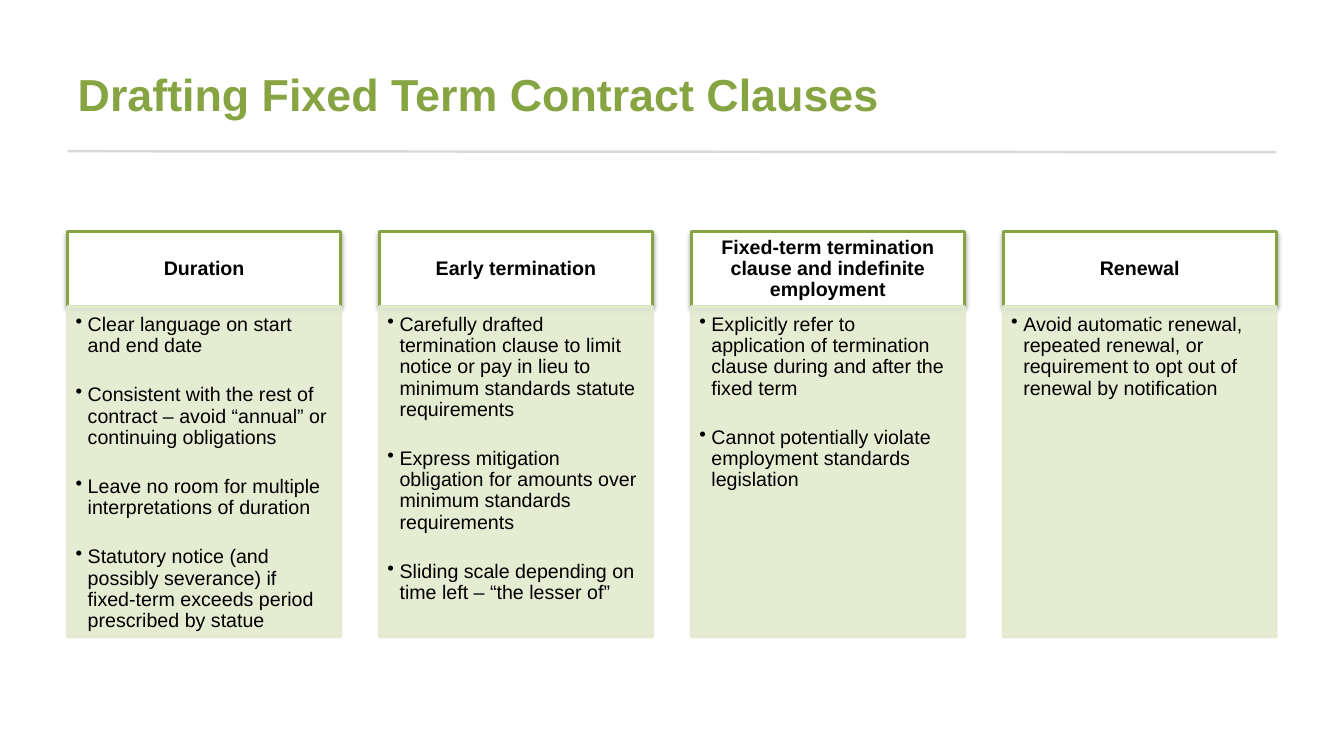
"""Build the slide on drafting fixed term contract clauses."""
from lxml.etree import SubElement
from pptx import Presentation
from pptx.dml.color import RGBColor
from pptx.enum.shapes import MSO_CONNECTOR, MSO_SHAPE
from pptx.enum.text import MSO_ANCHOR, PP_ALIGN
from pptx.oxml import parse_xml
from pptx.oxml.ns import nsdecls, qn
from pptx.util import Inches, Pt

GREEN = RGBColor(0x87, 0xA4, 0x43)
PALE = RGBColor(0xE3, 0xEA, 0xCE)
GREY = RGBColor(0xD9, 0xD9, 0xD9)
WHITE = RGBColor(0xFF, 0xFF, 0xFF)
BLACK = RGBColor(0, 0, 0)

CLAUSES = [
    ("Duration", [
        "Clear language on start and end date",
        "Consistent with the rest of contract – avoid “annual” or continuing obligations",
        "Leave no room for multiple interpretations of duration",
        "Statutory notice (and possibly severance) if fixed-term exceeds period prescribed by statue",
    ]),
    ("Early termination", [
        "Carefully drafted termination clause to limit notice or pay in lieu to minimum standards statute requirements",
        "Express mitigation obligation for amounts over minimum standards requirements",
        "Sliding scale depending on time left – “the lesser of”",
    ]),
    ("Fixed-term termination clause and indefinite employment", [
        "Explicitly refer to application of termination clause during and after the fixed term",
        "Cannot potentially violate employment standards legislation",
    ]),
    ("Renewal", [
        "Avoid automatic renewal, repeated renewal, or requirement to opt out of renewal by notification",
    ]),
]
LEFT, STEP, WIDTH = 0.67, 3.093, 2.71
SHADOW = (
    f'<a:effectLst {nsdecls("a")}><a:outerShdw blurRad="40000" dist="20000" dir="5400000" rotWithShape="0">'
    '<a:srgbClr val="000000"><a:alpha val="38000"/></a:srgbClr></a:outerShdw></a:effectLst>'
)


def add_box(left, top, height, fill, edge, insets):
    box = slide.shapes.add_shape(
        MSO_SHAPE.RECTANGLE, Inches(left), Inches(top), Inches(WIDTH), Inches(height))
    box.shadow.inherit = False
    box.fill.solid()
    box.fill.fore_color.rgb = fill
    box.line.color.rgb = edge
    box.line.width = Pt(2)
    frame = box.text_frame
    frame.word_wrap = True
    frame.margin_left, frame.margin_top, frame.margin_right, frame.margin_bottom = map(Inches, insets)
    return box


def set_text(para, text, bold, align):
    para.text = text
    para.alignment = align
    para.line_spacing = 0.9
    para.font.name = "Arial"
    para.font.size = Pt(14)
    para.font.bold = bold
    para.font.color.rgb = BLACK


deck = Presentation()
deck.slide_width, deck.slide_height = Inches(13.33), Inches(7.5)
slide = deck.slides.add_slide(deck.slide_layouts[5])

rule = slide.shapes.add_connector(
    MSO_CONNECTOR.STRAIGHT, Inches(0.67), Inches(1.5), Inches(12.66), Inches(1.51))
rule.line.color.rgb = GREY
rule.line.width = Pt(1.75)
SubElement(rule.element.spPr, qn("a:effectLst"))

title = slide.shapes.title
title.left, title.top, title.width, title.height = map(Inches, (0.67, 0.3, 12, 1.25))
title.text_frame.vertical_anchor = MSO_ANCHOR.MIDDLE
head = title.text_frame.paragraphs[0]
head.text = "Drafting Fixed Term Contract Clauses"
head.alignment = PP_ALIGN.LEFT
head.font.name = "Arial"
head.font.size = Pt(32)
head.font.bold = True
head.font.color.rgb = GREEN

for col, (name, points) in enumerate(CLAUSES):
    left = LEFT + col * STEP
    label = add_box(left, 2.3, 0.74, WHITE, GREEN, (0.11, 0.06, 0.11, 0.06))
    props = label.element.spPr
    props.replace(props.find(qn("a:effectLst")), parse_xml(SHADOW))
    label.text_frame.vertical_anchor = MSO_ANCHOR.MIDDLE
    set_text(label.text_frame.paragraphs[0], name, True, PP_ALIGN.CENTER)

    panel = add_box(left, 3.04, 3.28, PALE, PALE, (0.08, 0.08, 0.11, 0.12))
    for color in panel.element.spPr.iter(qn("a:srgbClr")):
        SubElement(color, qn("a:alpha"), val="90000")
    frame = panel.text_frame
    frame.vertical_anchor = MSO_ANCHOR.TOP
    for row, point in enumerate(points):
        para = frame.add_paragraph() if row else frame.paragraphs[0]
        set_text(para, point, False, PP_ALIGN.LEFT)
        para.space_before = Pt(20 if row else 0)
        props = para._p.get_or_add_pPr()
        props.set("marL", str(Inches(0.12)))
        props.set("indent", str(Inches(-0.12)))
        bullet = parse_xml(f'<a:buChar {nsdecls("a")} char="•"/>')
        props.find(qn("a:defRPr")).addprevious(bullet)

deck.save("out.pptx")
